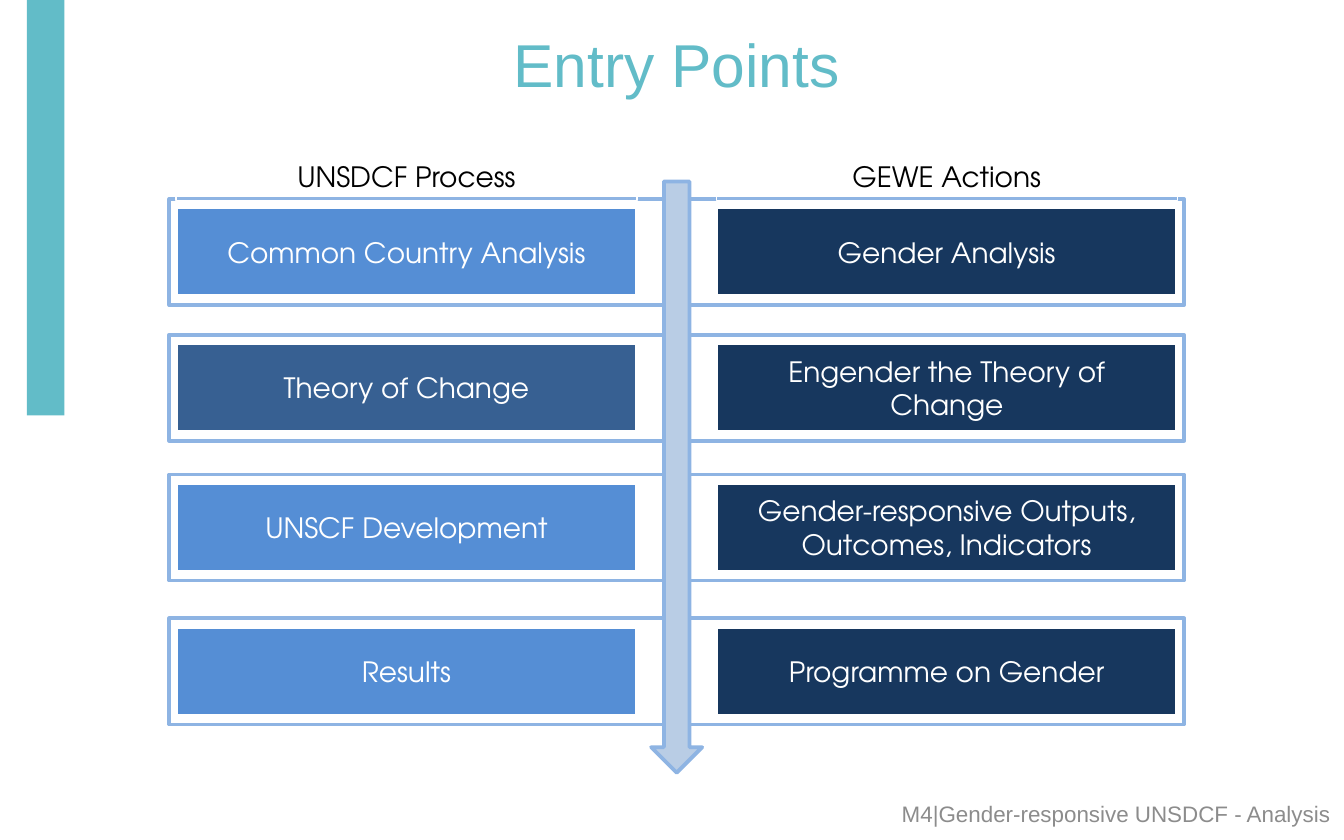
from pptx import Presentation
from pptx import util as u
from pptx.dml.color import RGBColor
from pptx.enum import shapes, text

HEADING_FONT, BODY_FONT = "Arial", "TeX Gyre Adventor"
TEAL, PALE_BLUE, BLUE, MID_BLUE, NAVY = "62BCC8", "8EB4E3", "558ED5", "376092", "17375E"
WHITE, BLACK, GREY = "FFFFFF", "000000", "8C8C8C"

deck = Presentation()
deck.slide_width, deck.slide_height = u.Inches(10), u.Inches(6.25)
page = deck.slides.add_slide(deck.slide_layouts[6])


def add_block(left, top, width, height, fill=None, line=None, weight=2, kind="RECTANGLE"):
    """Add a preset shape, measured in inches; no fill or line unless a colour is given."""
    box = page.shapes.add_shape(shapes.MSO_SHAPE[kind], *map(u.Inches, (left, top, width, height)))
    box.shadow.inherit = False
    if fill:
        box.fill.solid()
        box.fill.fore_color.rgb = RGBColor.from_string(fill)
    else:
        box.fill.background()
    if line:
        box.line.color.rgb = RGBColor.from_string(line)
        box.line.width = u.Pt(weight)
    else:
        box.line.fill.background()
    return box


def write(box, words, size, color, font=BODY_FONT, align="CENTER"):
    frame = box.text_frame
    frame.word_wrap = True
    frame.vertical_anchor = text.MSO_ANCHOR.MIDDLE
    para = frame.paragraphs[0]
    para.alignment = text.PP_ALIGN[align]
    span = para.add_run()
    span.text = words
    span.font.size, span.font.name = u.Pt(size), font
    span.font.color.rgb = RGBColor.from_string(color)


# Grid: a frame per row, with a process box on the left and an action box on the right
frame_left, frame_width, frame_height = 1.26, 7.55, 0.79
box_width, box_height = 3.43, 0.66
margin = 0.05
columns = (frame_left + margin, frame_left + frame_width - margin - box_width)
box_drop = (frame_height - box_height) / 2
row_tops = (1.48, 2.49, 3.53, 4.6)
rows = (
    ("Common Country Analysis", BLUE, "Gender Analysis"),
    ("Theory of Change", MID_BLUE, "Engender the Theory of Change"),
    ("UNSCF Development", BLUE, "Gender-responsive Outputs, Outcomes, Indicators"),
    ("Results", BLUE, "Programme on Gender"),
)

# Side bar and title
add_block(0.2, 0, 0.28, 3.09, TEAL)
title = page.shapes.add_textbox(*map(u.Inches, (frame_left, 0.24, frame_width, 0.46)))
write(title, "Entry Points", 32.4, TEAL, HEADING_FONT)

# Row frames, with the arrow running down over them
for top in row_tops:
    add_block(frame_left, top, frame_width, frame_height, WHITE, PALE_BLUE)
arrow_width = 0.38
add_block(frame_left + (frame_width - arrow_width) / 2, 1.35, arrow_width, 4.4,
          "B9CDE5", PALE_BLUE, kind="DOWN_ARROW")

# Process and action boxes
for top, (process, process_color, action) in zip(row_tops, rows):
    for left, words, fill in zip(columns, (process, action), (process_color, NAVY)):
        write(add_block(left, top + box_drop, box_width, box_height, fill, WHITE), words, 15, WHITE)

# Column headings
for left, words in zip(columns, ("UNSDCF Process", "GEWE Actions")):
    write(add_block(left, 1.14, box_width, 0.35, line=WHITE, weight=0.75), words, 15, BLACK)

# Footer
footer = page.shapes.add_textbox(*map(u.Inches, (3.62, 5.85, 6.38, 0.4)))
write(footer, "M4|Gender-responsive UNSDCF - Analysis", 12, GREY, HEADING_FONT, "RIGHT")

deck.save("out.pptx")
